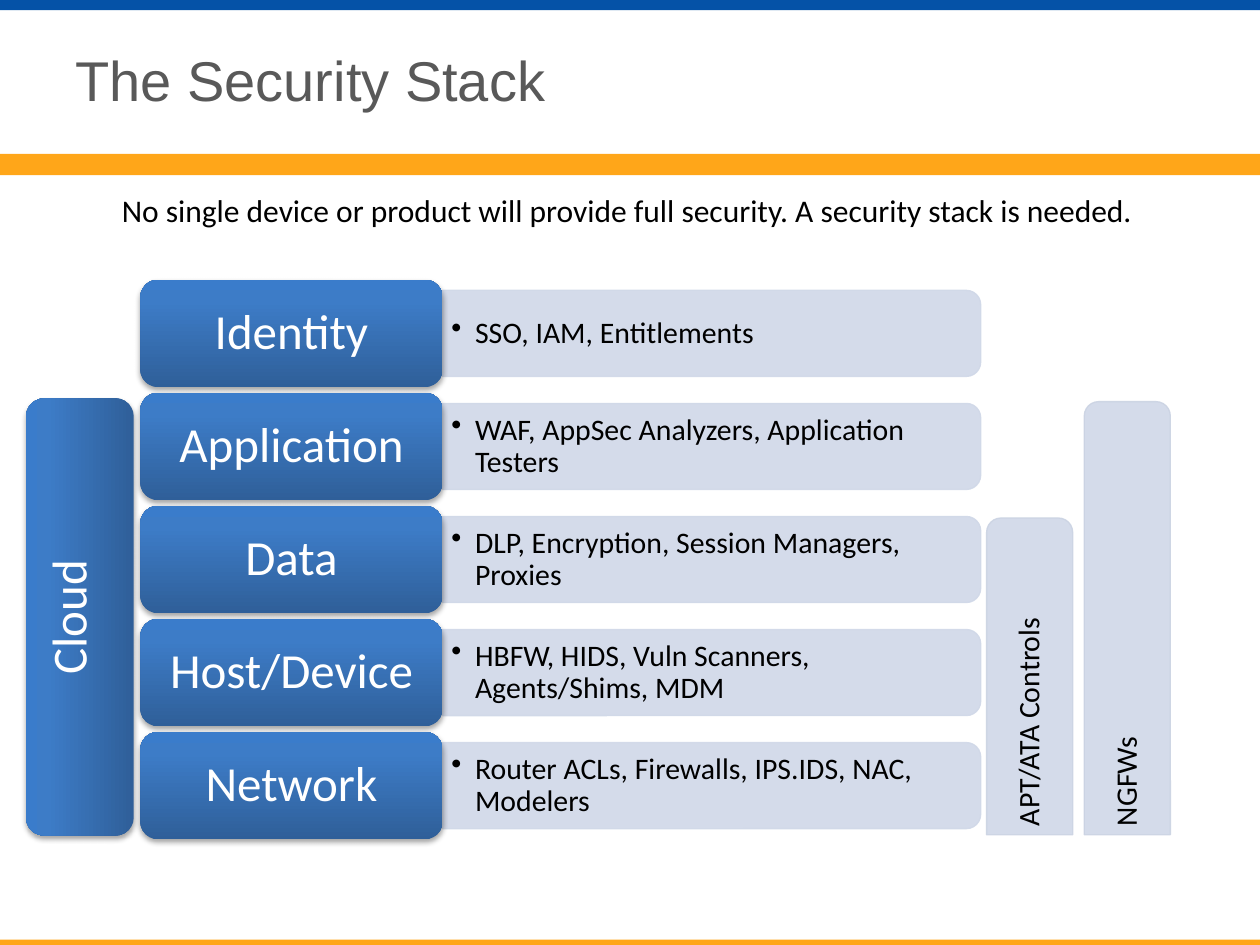
from lxml import etree
from pptx import Presentation
from pptx.dml.color import RGBColor
from pptx.enum import shapes, text
from pptx.oxml import parse_xml
from pptx.oxml.ns import nsdecls, qn
from pptx.util import Pt

GRADIENT = f"""<a:gradFill {nsdecls('a')} rotWithShape="1"><a:gsLst>
<a:gs pos="0"><a:srgbClr val="2F5F99"/></a:gs>
<a:gs pos="80000"><a:srgbClr val="3D7CC7"/></a:gs>
<a:gs pos="100000"><a:srgbClr val="3A7CCB"/></a:gs>
</a:gsLst><a:lin ang="16200000" scaled="0"/></a:gradFill>"""
SHADOW = f"""<a:effectLst {nsdecls('a')}>
<a:outerShdw blurRad="39370" dist="22860" dir="5400000" rotWithShape="0">
<a:srgbClr val="000000"><a:alpha val="35000"/></a:srgbClr></a:outerShdw></a:effectLst>"""

prs = Presentation()
prs.slide_width, prs.slide_height = Pt(720), Pt(540)
slide = prs.slides.add_slide(prs.slide_layouts[6])
rgb = RGBColor.from_string


def add_block(preset, left, top, width, height, fill=None, line=None, turn=0):
    """Add a shape; without a fill it is a glossy blue block, with a line it is a pale panel."""
    block = slide.shapes.add_shape(preset, Pt(left), Pt(top), Pt(width), Pt(height))
    block.rotation = turn
    block.shadow.inherit = False
    block.line.fill.background()
    props = block._element.spPr
    if fill is None:
        props.insert_element_before(parse_xml(GRADIENT), "a:ln", "a:effectLst")
        props.replace(props.find(qn("a:effectLst")), parse_xml(SHADOW))
        return block
    block.fill.solid()
    block.fill.fore_color.rgb = rgb(fill)
    if line:
        block.line.color.rgb = rgb(line)
        block.line.width = Pt(0.75)
        for color in props.iter(qn("a:srgbClr")):
            etree.SubElement(color, qn("a:alpha")).set("val", "90000")
    return block


def write(holder, words, size, color, font="Calibri", anchor="MIDDLE", align="LEFT",
          inset=(7.2, 3.6), spacing=None, wrap=True):
    """Put one run of text in a shape or text box."""
    frame = holder.text_frame
    frame.word_wrap = wrap
    frame.vertical_anchor = text.MSO_ANCHOR[anchor]
    frame.margin_left = frame.margin_right = Pt(inset[0])
    frame.margin_top = frame.margin_bottom = Pt(inset[1])
    para = frame.paragraphs[0]
    para.alignment = text.PP_ALIGN[align]
    para.line_spacing = spacing
    run = para.add_run()
    run.text = words
    run.font.size, run.font.name = Pt(size), font
    run.font.color.rgb = rgb(color)
    return para


ROUND = shapes.MSO_SHAPE.ROUNDED_RECTANGLE
ROUND_TOP = shapes.MSO_SHAPE.ROUND_2_SAME_RECTANGLE

# Page bands
for top, height, color in [(537, 3.6, "FFA619"), (88, 12.2, "FFA619"), (0, 5.8, "0552A7")]:
    add_block(shapes.MSO_SHAPE.RECTANGLE, 0, top, 720, height, color)

# Title
title = slide.shapes.add_textbox(Pt(36), Pt(8), Pt(648), Pt(74))
write(title, "The Security Stack", 32, "595959", font="Arial")

# Stack layers: a panel with its tools behind each label
layers = [
    ("Identity", "SSO, IAM, Entitlements"),
    ("Application", "WAF, AppSec Analyzers, Application Testers"),
    ("Data", "DLP, Encryption, Session Managers, Proxies"),
    ("Host/Device", "HBFW, HIDS, Vuln Scanners, Agents/Shims, MDM"),
    ("Network", "Router ACLs, Firewalls, IPS.IDS, NAC, Modelers"),
]
label_left, label_width, label_height = 80.2, 172.8, 61.5
panel_left, panel_width, panel_depth = 253, 307.4, 49.2
tools_height = 44.6
for row, (layer, tools) in enumerate(layers):
    label_top = 159.8 + row * 64.6
    middle = label_top + label_height / 2
    add_block(ROUND_TOP, panel_left + (panel_width - panel_depth) / 2, middle - panel_width / 2,
              panel_depth, panel_width, "D0D8E8", "D0D8E8", turn=90)
    tools_box = slide.shapes.add_textbox(Pt(panel_left), Pt(middle - tools_height / 2),
                                         Pt(305), Pt(tools_height))
    bullet = write(tools_box, tools, 17, "000000", inset=(5, 2.7), spacing=0.9)
    bullet_props = bullet._p.get_or_add_pPr()
    bullet_props.set("marL", str(Pt(13.5)))
    bullet_props.set("indent", str(-Pt(13.5)))
    etree.SubElement(bullet_props, qn("a:buChar")).set("char", "•")
    label = add_block(ROUND, label_left, label_top, label_width, label_height)
    write(label, layer, 28, "FFFFFF", align="CENTER", inset=(8.4, 4.2), spacing=0.9)

# Cloud block beside the lower layers
cloud = add_block(ROUND, -79.2, 321.8, 249.8, 61.5, turn=270)
write(cloud, "Cloud", 28, "FFFFFF", anchor="TOP", align="CENTER")

# Controls that span several layers
for words, left, top in [("NGFWs", 619.6, 229.5), ("APT/ATA Controls", 563.8, 296)]:
    height = 477 - top
    add_block(ROUND_TOP, left, top, panel_depth, height, "D0D8E8", "CBD3E3")
    length = height - 2
    span_box = slide.shapes.add_textbox(
        Pt(left + (panel_depth - length) / 2), Pt(top + (height - tools_height) / 2 + 1),
        Pt(length), Pt(tools_height))
    span_box.rotation = 270
    write(span_box, words, 17, "000000", inset=(5, 2.7), spacing=0.9)

# Message under the title
message = slide.shapes.add_textbox(Pt(62.6), Pt(105.4), Pt(595.4), Pt(29))
write(message, "No single device or product will provide full security. A security stack is needed.",
      18, "000000", anchor="TOP", wrap=False)
message.text_frame.auto_size = text.MSO_AUTO_SIZE.SHAPE_TO_FIT_TEXT

prs.save("out.pptx")
